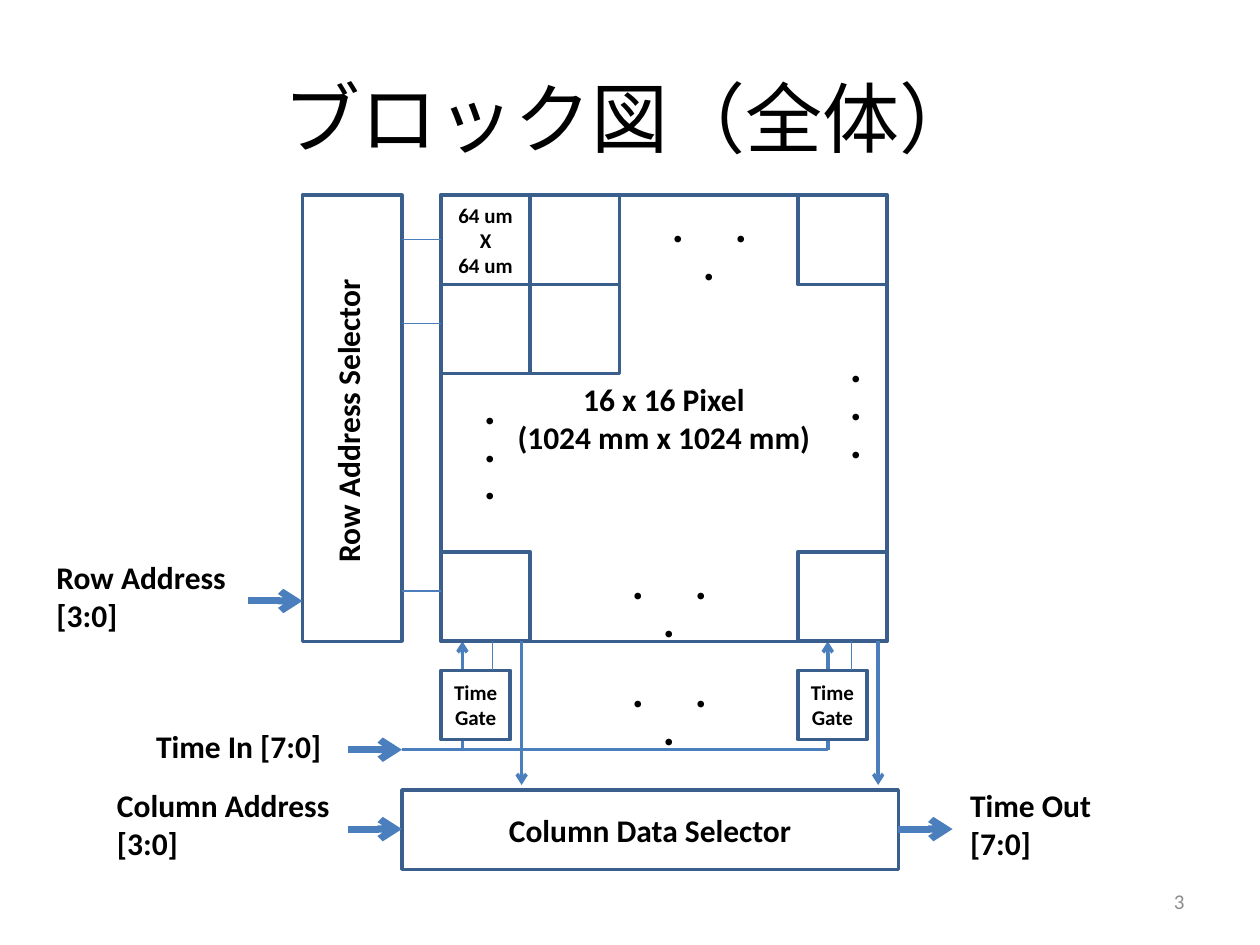
from lxml import etree
from pptx import Presentation
from pptx.dml.color import RGBColor
from pptx.enum.shapes import MSO_CONNECTOR as Connector, MSO_SHAPE as Shape
from pptx.enum.text import MSO_ANCHOR as Anchor, PP_ALIGN as Align
from pptx.oxml.ns import qn
from pptx.util import Inches, Pt


def color(value):
    return RGBColor.from_string(value)


class Diagram:
    font = "Calibri"
    ink, edge, wire = "000000", "3A5F8C", "4B7EBC"

    def __init__(self, slide):
        self.shapes = slide.shapes

    def set_text(self, shape, text, size, bold, align, ink=ink):
        frame = shape.text_frame
        frame.word_wrap = True
        frame.text = text
        for para in frame.paragraphs:
            para.alignment = align
            for span in para.runs:
                span.font.name = self.font
                span.font.size = Pt(size)
                span.font.bold = bold
                span.font.color.rgb = color(ink)

    def label(self, text, left, top, width, height, size=18, bold=True,
              align=Align.LEFT, anchor=Anchor.TOP, ink=ink, rotation=0):
        box = self.shapes.add_textbox(*map(Inches, (left, top, width, height)))
        box.rotation = rotation
        box.text_frame.vertical_anchor = anchor
        self.set_text(box, text, size, bold, align, ink)

    def block(self, left, top, width, height, text="", size=18, fill=None):
        box = self.shapes.add_shape(
            Shape.RECTANGLE, *map(Inches, (left, top, width, height)))
        box.shadow.inherit = False
        if fill:
            box.fill.solid()
            box.fill.fore_color.rgb = color(fill)
        else:
            box.fill.background()
        box.line.color.rgb = color(self.edge)
        box.line.width = Pt(2)
        if text:
            frame = box.text_frame
            frame.margin_left = frame.margin_right = 0
            frame.vertical_anchor = Anchor.MIDDLE
            self.set_text(box, text, size, True, Align.CENTER)

    def line(self, x1, y1, x2, y2, width=2.0, arrow=False):
        line = self.shapes.add_connector(
            Connector.STRAIGHT, *map(Inches, (x1, y1, x2, y2)))
        line.line.color.rgb = color(self.wire)
        line.line.width = Pt(width)
        properties = line._element.spPr
        if arrow:
            etree.SubElement(properties.find(qn("a:ln")), qn("a:tailEnd"), type="arrow")
        etree.SubElement(properties, qn("a:effectLst"))


def main():
    deck = Presentation()
    deck.slide_width, deck.slide_height = Inches(10), Inches(7.5)
    page = deck.slides.add_slide(deck.slide_layouts[6])
    diagram = Diagram(page)

    left, top, side = 3.5, 1.55, 3.54
    cell = side / 5
    bottom = top + side
    last_column = left + 4 * cell
    bus_y, selector_x, selector_y = 5.95, 3.19, 6.27

    # Time input feeds, behind the gates
    for x in (6.57, 3.67):
        diagram.line(x, bus_y, x, bottom, arrow=True)

    # Title
    diagram.label("ブロック図（全体）", 0.5, 0.3, 9, 1.25, size=44, bold=False,
                  align=Align.CENTER, anchor=Anchor.MIDDLE)

    # Selectors and pixel array
    diagram.block(2.4, top, 0.79, side)
    diagram.label("Row Address Selector", 1.46, 3.06, 2.6, 0.4, rotation=270)
    diagram.block(left, top, side, side, "16 x 16 Pixel\n(1024 mm x 1024 mm)")
    diagram.block(selector_x, selector_y, 3.94, 0.63, "Column Data Selector")

    # Time gates
    for x in (left, last_column):
        diagram.block(x, 5.32, 0.55, 0.55, "Time\nGate", size=12, fill="FFFFFF")

    # Pixels drawn at the array corners
    diagram.block(left, top, cell, cell, "64 um\nX\n64 um", size=12)
    for column, row in ((1, 0), (1, 1), (0, 1), (4, 0), (4, 4), (0, 4)):
        diagram.block(left + column * cell, top + row * cell, cell, cell)

    # Ellipsis dots
    for x, y in ((5.16, 1.7), (4.84, 4.53), (4.84, 5.39)):
        diagram.label("・　・　・", x, y, 1.1, 0.4, bold=False)
    for x, y in ((6.57, 2.81), (3.67, 3.14)):
        diagram.label("・\n・\n・", x, y, 0.47, 1.01, bold=False)

    # Internal wiring
    diagram.line(selector_x, bus_y, 6.57, bus_y)
    for x in (4.14, 6.97):
        diagram.line(x, bottom, x, 6.23, arrow=True)
    for y in (1.9, 2.57, 4.69):
        diagram.line(left, y, selector_x, y, width=0.75)
    for x in (3.91, 6.76):
        diagram.line(x, 5.32, x, bottom, width=0.75)

    # External signals
    for x, y in ((1.97, 4.77), (2.76, bus_y), (2.76, 6.58), (7.13, 6.58)):
        diagram.line(x, y, x + 0.43, y, width=4, arrow=True)
    for text, x, y, width, height in (
            ("Row Address\n[3:0]", 0.35, 4.38, 1.57, 0.71),
            ("Time In [7:0]", 1.14, 5.72, 1.57, 0.4),
            ("Column Address [3:0]", 0.83, 6.19, 1.89, 0.71),
            ("Time Out [7:0]", 7.6, 6.19, 1.18, 0.71)):
        diagram.label(text, x, y, width, height)

    # Page number
    diagram.label("3", 7.17, 6.95, 2.33, 0.4, size=12, bold=False,
                  align=Align.RIGHT, anchor=Anchor.MIDDLE, ink="8C8C8C")

    deck.save("out.pptx")


if __name__ == "__main__":
    main()
